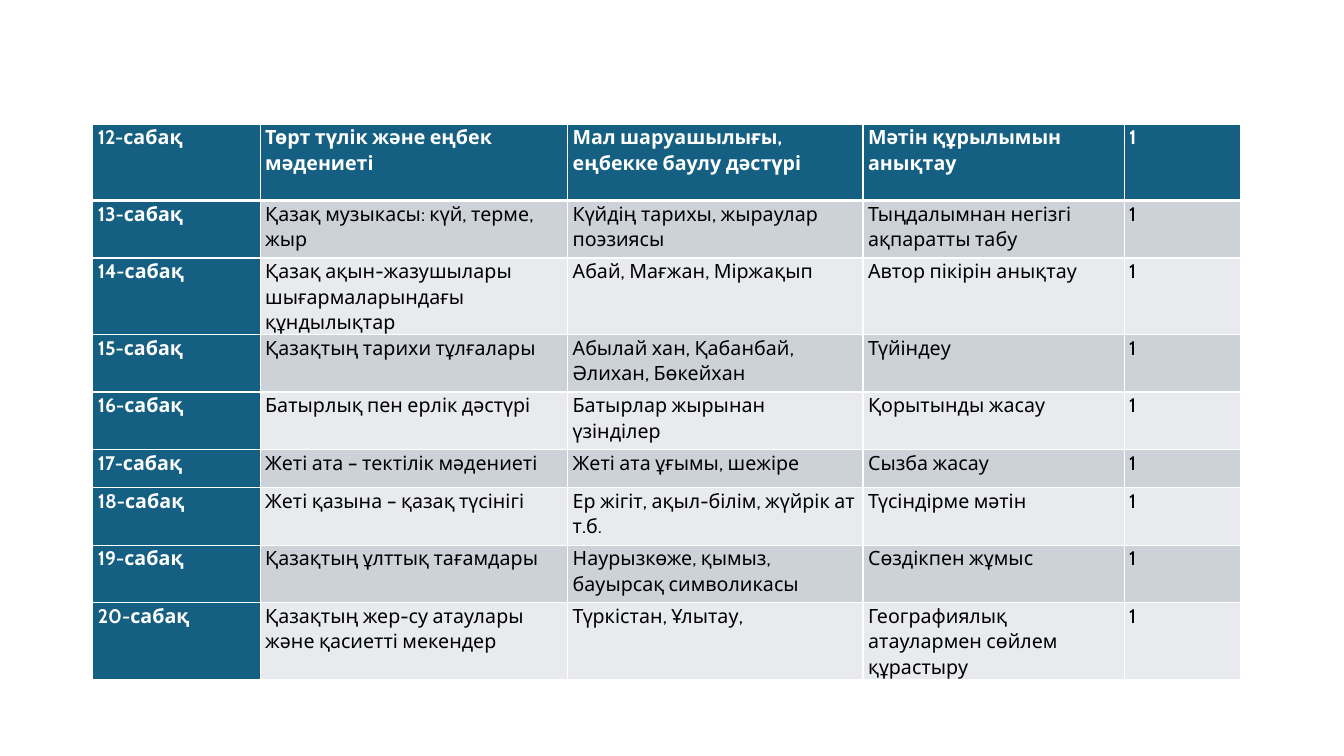
from dataclasses import dataclass

from lxml.etree import SubElement
from pptx import Presentation
from pptx.dml.color import RGBColor
from pptx.oxml.ns import qn
from pptx.table import Table, _Cell
from pptx.util import Inches, Pt

WHITE = RGBColor(0xFF, 0xFF, 0xFF)
BLACK = RGBColor(0x00, 0x00, 0x00)
TEAL = RGBColor(0x15, 0x60, 0x82)
DARK_BAND = RGBColor(0xCC, 0xD2, 0xD8)
LIGHT_BAND = RGBColor(0xE8, 0xEA, 0xED)

COLUMN_WIDTHS = (1.66, 3.05, 2.93, 2.59, 1.15)
LINE_HEIGHT = 0.19
FIRST_LESSON = 12
HOURS = "1"

CELL_FORMAT = {
    "margin_left": Inches(0.05),
    "margin_right": Inches(0.05),
    "margin_top": 0,
    "margin_bottom": 0,
}
PARAGRAPH_FORMAT = {"line_spacing": 1.07, "space_after": Pt(8)}
FONT_FORMAT = {"name": "Cabin", "size": Pt(14)}


@dataclass(frozen=True)
class Lesson:
    topic: str
    content: str
    skill: str
    lines: int = 3


LESSONS = (
    Lesson("Төрт түлік және еңбек мәдениеті", "Мал шаруашылығы, еңбекке баулу дәстүрі",
           "Мәтін құрылымын анықтау", 4),
    Lesson("Қазақ музыкасы: күй, терме, жыр", "Күйдің тарихы, жыраулар поэзиясы",
           "Тыңдалымнан негізгі ақпаратты табу"),
    Lesson("Қазақ ақын-жазушылары шығармаларындағы құндылықтар", "Абай, Мағжан, Міржақып",
           "Автор пікірін анықтау", 4),
    Lesson("Қазақтың тарихи тұлғалары", "Абылай хан, Қабанбай, Әлихан, Бөкейхан", "Түйіндеу"),
    Lesson("Батырлық пен ерлік дәстүрі", "Батырлар жырынан үзінділер", "Қорытынды жасау"),
    Lesson("Жеті ата – тектілік мәдениеті", "Жеті ата ұғымы, шежіре", "Сызба жасау", 2),
    Lesson("Жеті қазына – қазақ түсінігі", "Ер жігіт, ақыл-білім, жүйрік ат т.б.",
           "Түсіндірме мәтін"),
    Lesson("Қазақтың ұлттық тағамдары", "Наурызкөже, қымыз, бауырсақ символикасы",
           "Сөздікпен жұмыс"),
    Lesson("Қазақтың жер-су атаулары және қасиетті мекендер", "Түркістан, Ұлытау,",
           "Географиялық атаулармен сөйлем құрастыру", 4),
)


def apply_format(target: object, values: dict) -> None:
    for name, value in values.items():
        setattr(target, name, value)


def add_borders(cell: _Cell, widths: dict[str, int]) -> None:
    properties = cell._tc.get_or_add_tcPr()
    for side, width in widths.items():
        line = SubElement(properties, qn(f"a:ln{side}"), w=str(Pt(width)))
        color = SubElement(SubElement(line, qn("a:solidFill")), qn("a:srgbClr"))
        color.set("val", str(WHITE))


def fill_cell(cell: _Cell, text: str, fill: RGBColor, color: RGBColor, bold: bool) -> None:
    apply_format(cell, CELL_FORMAT)
    cell.fill.solid()
    cell.fill.fore_color.rgb = fill

    paragraph = cell.text_frame.paragraphs[0]
    apply_format(paragraph, PARAGRAPH_FORMAT)
    tabs = SubElement(paragraph._p.get_or_add_pPr(), qn("a:tabLst"))
    SubElement(tabs, qn("a:tab"), pos=str(Inches(2.65)), algn="l")

    run = paragraph.add_run()
    run.text = text
    apply_format(run.font, FONT_FORMAT | {"bold": bold})
    run.font.color.rgb = color


def fill_lesson_row(table: Table, row: int, lesson: Lesson) -> None:
    table.rows[row].height = Inches(lesson.lines * LINE_HEIGHT)
    band = DARK_BAND if row % 2 else LIGHT_BAND
    texts = (f"{FIRST_LESSON + row}-сабақ", lesson.topic, lesson.content, lesson.skill, HOURS)
    for column, text in enumerate(texts):
        cell = table.cell(row, column)
        heading = row == 0 or column == 0
        # The header row has a thicker rule below it
        if row == 0:
            add_borders(cell, {"L": 1, "R": 1, "T": 1, "B": 3})
        fill_cell(cell, text, TEAL if heading else band, WHITE if heading else BLACK, heading)


def main() -> None:
    presentation = Presentation()
    presentation.slide_width = Inches(13.33)
    presentation.slide_height = Inches(7.5)
    slide = presentation.slides.add_slide(presentation.slide_layouts[6])

    # Lesson plan table
    height = sum(lesson.lines for lesson in LESSONS) * LINE_HEIGHT
    table = slide.shapes.add_table(
        len(LESSONS), len(COLUMN_WIDTHS),
        Inches(0.92), Inches(1.23), Inches(sum(COLUMN_WIDTHS)), Inches(height),
    ).table
    table.first_col = True
    for column, width in zip(table.columns, COLUMN_WIDTHS):
        column.width = Inches(width)
    for row, lesson in enumerate(LESSONS):
        fill_lesson_row(table, row, lesson)

    presentation.save("out.pptx")


if __name__ == "__main__":
    main()
